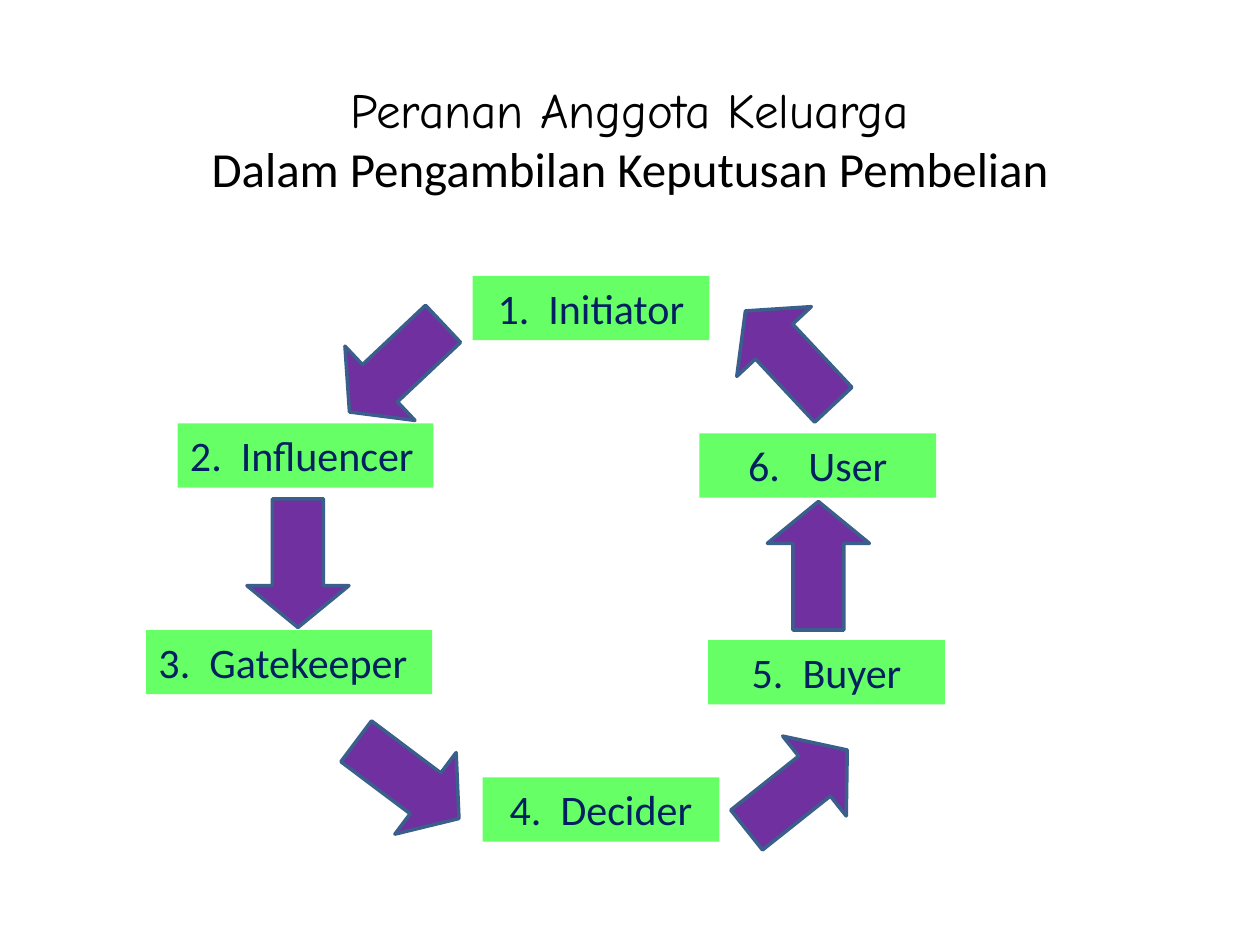
from dataclasses import dataclass

from pptx import Presentation
from pptx.dml.color import RGBColor
from pptx.enum.shapes import MSO_SHAPE as Shape
from pptx.enum.text import MSO_ANCHOR as Anchor, MSO_AUTO_SIZE as AutoSize, PP_ALIGN as Align
from pptx.util import Inches, Pt


@dataclass(frozen=True)
class Theme:
    heading: RGBColor = RGBColor(0x00, 0x00, 0x00)
    role_fill: RGBColor = RGBColor(0x66, 0xFF, 0x66)
    role_text: RGBColor = RGBColor(0x00, 0x20, 0x60)
    arrow_fill: RGBColor = RGBColor(0x70, 0x30, 0xA0)
    arrow_line: RGBColor = RGBColor(0x3A, 0x5F, 0x8C)
    accent_font: str = "Comic Neue"
    body_font: str = "Calibri"
    heading_size: int = 28
    role_size: int = 24
    line_width: int = 2


class RoleCycle:
    ROLE_HEIGHT = 0.51
    ARROW_SIZE = (0.81, 1.02)

    def __init__(self, slide, theme):
        self.slide = slide
        self.theme = theme

    def add_run(self, paragraph, text, font, size, color):
        run = paragraph.add_run()
        run.text = text
        run.font.name = font
        run.font.size = Pt(size)
        run.font.color.rgb = color

    def add_shape(self, kind, left, top, width, height, fill):
        shape = self.slide.shapes.add_shape(
            kind, Inches(left), Inches(top), Inches(width), Inches(height))
        shape.shadow.inherit = False
        shape.fill.solid()
        shape.fill.fore_color.rgb = fill
        return shape

    def add_heading(self, lines, left, top, width, height):
        heading = self.slide.shapes.add_textbox(
            Inches(left), Inches(top), Inches(width), Inches(height))
        frame = heading.text_frame
        frame.word_wrap = True
        frame.vertical_anchor = Anchor.MIDDLE
        paragraph = frame.paragraphs[0]
        paragraph.alignment = Align.CENTER
        for index, (text, font) in enumerate(lines):
            if index:
                paragraph.add_line_break()
            self.add_run(paragraph, text, font, self.theme.heading_size, self.theme.heading)

    def add_role(self, text, left, top, width=1.88, align=Align.CENTER):
        role = self.add_shape(
            Shape.RECTANGLE, left, top, width, self.ROLE_HEIGHT, self.theme.role_fill)
        role.line.fill.background()
        frame = role.text_frame
        frame.word_wrap = True
        frame.auto_size = AutoSize.SHAPE_TO_FIT_TEXT
        frame.vertical_anchor = Anchor.TOP
        paragraph = frame.paragraphs[0]
        paragraph.alignment = align
        self.add_run(paragraph, text, self.theme.body_font,
                     self.theme.role_size, self.theme.role_text)

    def add_arrow(self, left, top, rotation):
        arrow = self.add_shape(
            Shape.DOWN_ARROW, left, top, *self.ARROW_SIZE, self.theme.arrow_fill)
        arrow.rotation = rotation
        arrow.adjustments[0] = 0.5
        arrow.adjustments[1] = 0.41
        arrow.line.color.rgb = self.theme.arrow_line
        arrow.line.width = Pt(self.theme.line_width)


def main():
    deck = Presentation()
    deck.slide_width, deck.slide_height = Inches(10), Inches(7.5)
    theme = Theme()
    cycle = RoleCycle(deck.slides.add_slide(deck.slide_layouts[6]), theme)

    # Heading
    cycle.add_heading([
        ("Peranan Anggota Keluarga", theme.accent_font),
        ("Dalam Pengambilan Keputusan Pembelian", theme.body_font),
    ], 0.5, 0.17, 9, 1.86)

    # Family roles, counter-clockwise from the top
    cycle.add_role("1.  Initiator", 3.75, 2.19)
    cycle.add_role("2.  Influencer", 1.41, 3.36, 2.03, Align.LEFT)
    cycle.add_role("3.  Gatekeeper", 1.16, 5, 2.27, Align.LEFT)
    cycle.add_role("4.  Decider", 3.83, 6.17)
    cycle.add_role("5.  Buyer", 5.62, 5.08)
    cycle.add_role("6.   User", 5.55, 3.44)

    # Arrows from each role to the next: left, top, rotation
    for left, top, rotation in [
        (2.74, 2.41, 46.7),
        (1.96, 3.96, 0),
        (2.83, 5.68, 306.9),
        (5.92, 5.76, 231.5),
        (6.09, 3.98, 180),
        (5.86, 2.33, 136.9),
    ]:
        cycle.add_arrow(left, top, rotation)

    deck.save("out.pptx")


if __name__ == "__main__":
    main()
